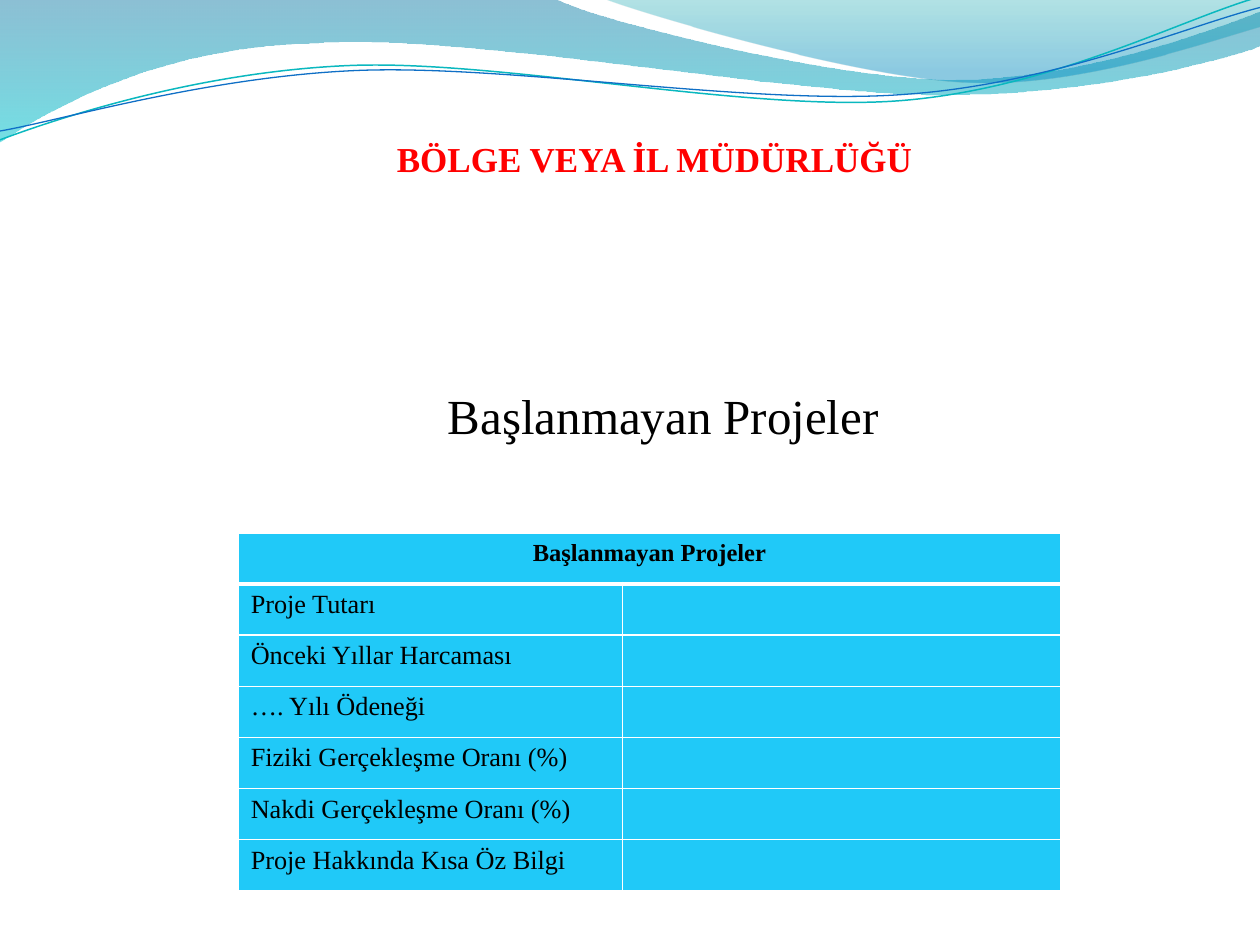
from math import cos, radians, sin

from lxml.etree import SubElement
from pptx import Presentation
from pptx.dml.color import RGBColor
from pptx.enum.text import MSO_ANCHOR as Anchor, PP_ALIGN as Align
from pptx.oxml.ns import qn
from pptx.util import Inches, Pt

FONT = "Times New Roman"
COLORS = {
    "title": "FF0000", "text": "000000", "cell": "20C9F8", "border": "FFFFFF",
    "wave_top": "0074A1", "wave_bottom": "00C6CF",
    "crest_top": "00A1A9", "crest_bottom": "008BBF",
    "teal_line": "0AB8BF", "blue_line": "0F6FC6",
}
LINE_TILT = -2.7

# Each segment holds one end point, or two control points and an end point
WAVE = [
    [(0, 0)], [(4.4, -0.01)],
    [(4.76, 0.17), (6.64, 0.63), (7.58, 0.63)],
    [(8.53, 0.63), (9.58, 0.26), (10, 0.09)],
    [(10.01, 0.36)],
    [(9.83, 0.44), (8.7, 0.76), (7.46, 0.75)],
    [(6.22, 0.75), (3.82, 0.28), (2.57, 0.34)],
    [(1.29, 0.36), (0.46, 0.83), (-0.01, 1.13)],
    [(0, 0)],
]
CREST = [
    [(4.79, -0.01)],
    [(5.09, 0.11), (6.82, 0.62), (7.69, 0.65)],
    [(8.56, 0.69), (9.61, 0.32), (10, 0.21)],
    [(10, 0)], [(4.79, -0.01)],
]
TEAL_LINE = [
    [(0, 1.11)],
    [(0.48, 0.93), (1.58, 0.57), (2.77, 0.52)],
    [(3.95, 0.47), (5.93, 0.89), (7.13, 0.8)],
    [(8.33, 0.71), (9.38, 0.15), (9.98, -0.02)],
]
BLUE_LINE = [
    [(0, 1.04)],
    [(0.47, 0.96), (1.64, 0.61), (2.83, 0.56)],
    [(4.03, 0.51), (5.97, 0.84), (7.17, 0.75)],
    [(8.36, 0.67), (9.41, 0.21), (10, 0.06)],
]
HEADING = "Başlanmayan Projeler"
ROW_LABELS = [
    "Proje Tutarı", "Önceki Yıllar Harcaması", "…. Yılı Ödeneği",
    "Fiziki Gerçekleşme Oranı (%)", "Nakdi Gerçekleşme Oranı (%)",
    "Proje Hakkında Kısa Öz Bilgi",
]


def color(name):
    return RGBColor.from_string(COLORS[name])


def turn(point, center, degrees):
    """Turn a point clockwise around a center."""
    dx, dy = point[0] - center[0], point[1] - center[1]
    angle = radians(degrees)
    return (center[0] + dx * cos(angle) - dy * sin(angle),
            center[1] + dx * sin(angle) + dy * cos(angle))


def add_outline(page, segments, close):
    """Freeform whose three-point segments become cubic curves."""
    corners = [(Inches(x), Inches(y)) for segment in segments for x, y in segment]
    builder = page.shapes.build_freeform(*corners[0])
    builder.add_line_segments(corners[1:], close=close)
    shape = builder.convert_to_shape()
    shape.shadow.inherit = False
    steps = iter(shape.element.findall(f".//{qn('a:lnTo')}"))
    for segment in segments[1:]:
        step = next(steps)
        if len(segment) == 3:
            step.tag = qn("a:cubicBezTo")
            for extra in (next(steps), next(steps)):
                step.append(extra[0])
                extra.getparent().remove(extra)
    return shape


def add_wave(page, segments, stops):
    """Filled wave; stops are (position, colour name, opacity), in percent."""
    shape = add_outline(page, segments, close=True)
    shape.line.fill.background()
    shape.fill.gradient()
    gradient = shape.element.spPr.find(qn("a:gradFill"))
    for child in list(gradient):
        gradient.remove(child)
    stop_list = SubElement(gradient, qn("a:gsLst"))
    for position, name, opacity in stops:
        stop = SubElement(stop_list, qn("a:gs"), pos=str(position * 1000))
        fill = SubElement(stop, qn("a:srgbClr"), val=COLORS[name])
        SubElement(fill, qn("a:alpha"), val=str(opacity * 1000))
    SubElement(gradient, qn("a:lin"), ang=str(90 * 60000), scaled="0")


def add_wave_line(page, segments, center, name, width):
    """Open curve, laid level and then tilted around its center."""
    level = [[turn(point, center, -LINE_TILT) for point in segment] for segment in segments]
    shape = add_outline(page, level, close=False)
    shape.rotation = LINE_TILT
    shape.fill.background()
    shape.line.color.rgb = color(name)
    shape.line.width = Pt(width)


def add_span(para, text, size, name="text", bold=False):
    span = para.add_run()
    span.text = text
    span.font.name = FONT
    span.font.size = Pt(size)
    span.font.bold = bold
    span.font.color.rgb = color(name)


def add_text(page, place, insets, text, size, name="text", bold=False):
    box = page.shapes.add_textbox(*(Inches(length) for length in place))
    frame = box.text_frame
    frame.word_wrap = True
    frame.vertical_anchor = Anchor.MIDDLE
    (frame.margin_left, frame.margin_top,
     frame.margin_right, frame.margin_bottom) = (Inches(inset) for inset in insets)
    para = frame.paragraphs[0]
    para.alignment = Align.CENTER
    add_span(para, text, size, name, bold)


def style_cell(cell, top=1, bottom=1):
    """White borders, in points, and a plain fill."""
    properties = cell._tc.get_or_add_tcPr()
    for side, width in (("L", 1), ("R", 1), ("T", top), ("B", bottom)):
        line = SubElement(properties, qn(f"a:ln{side}"), w=str(Pt(width)))
        fill = SubElement(line, qn("a:solidFill"))
        SubElement(fill, qn("a:srgbClr"), val=COLORS["border"])
    cell.fill.solid()
    cell.fill.fore_color.rgb = color("cell")


def add_project_table(page):
    frame = page.shapes.add_table(len(ROW_LABELS) + 1, 2, Inches(1.89), Inches(4.23),
                                  Inches(6.53), Inches(2.84))
    table = frame.table
    for column, width in zip(table.columns, (3.05, 3.48)):
        column.width = Inches(width)
    header = table.cell(0, 0)
    header.merge(table.cell(0, 1))
    for index, row in enumerate(table.rows):
        for cell in row.cells:
            if not cell.is_spanned:
                style_cell(cell, top=3 if index == 1 else 1, bottom=3 if index == 0 else 1)
    para = header.text_frame.paragraphs[0]
    para.alignment = Align.CENTER
    add_span(para, HEADING, 14, bold=True)
    for index, label in enumerate(ROW_LABELS, start=1):
        add_span(table.cell(index, 0).text_frame.paragraphs[0], label, 15)


def main():
    deck = Presentation()
    deck.slide_width, deck.slide_height = Inches(10), Inches(7.5)
    page = deck.slides.add_slide(deck.slide_layouts[6])

    # Wave decoration along the top
    add_wave(page, WAVE, [(0, "wave_top", 45), (100, "wave_bottom", 55)])
    add_wave(page, CREST, [(0, "crest_top", 30), (80, "crest_bottom", 45)])
    add_wave_line(page, TEAL_LINE, (4.99, 0.58), "teal_line", 0.85)
    add_wave_line(page, BLUE_LINE, (5, 0.59), "blue_line", 0.75)

    # Title, table and heading
    add_text(page, (1.93, 0.92, 6.53, 0.63), (0, 0.05, 0, 0.01),
             "BÖLGE VEYA İL MÜDÜRLÜĞÜ", 20, "title", bold=True)
    add_project_table(page)
    add_text(page, (2, 2.18, 6.53, 2.65), (0.1, 0.05, 0.1, 0.48), HEADING, 28)

    deck.save("out.pptx")


if __name__ == "__main__":
    main()
